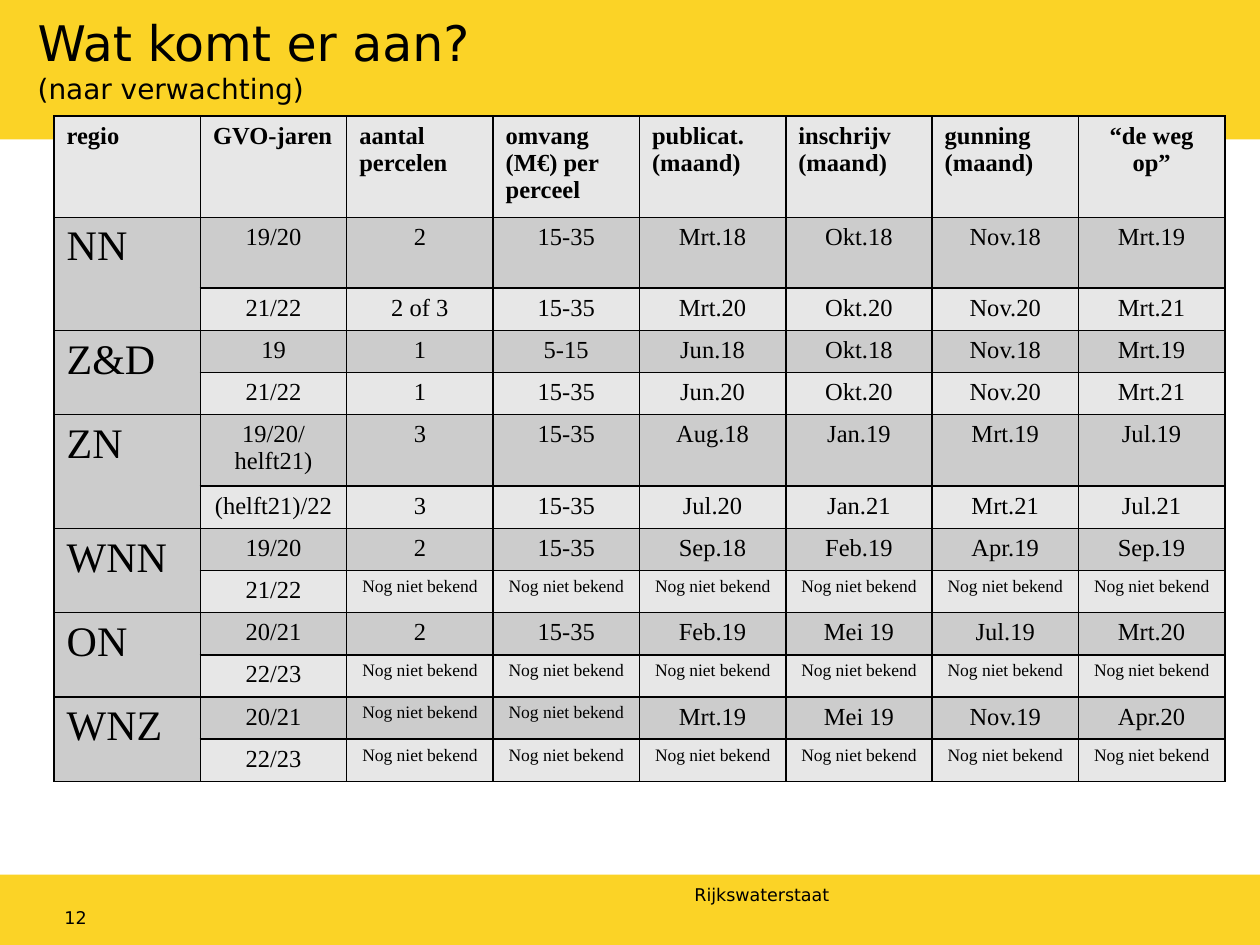
from lxml.etree import SubElement
from pptx import Presentation
from pptx.dml.color import RGBColor
from pptx.enum.shapes import MSO_SHAPE
from pptx.enum.text import MSO_ANCHOR, PP_ALIGN
from pptx.oxml.ns import qn
from pptx.util import Cm, Pt

COLORS = {"band": "FBD326", "light": "E7E7E7", "dark": "CCCCCC", "text": "000000"}
SANS, SERIF = "DejaVu Sans", "Times New Roman"
UNKNOWN = "Nog niet bekend"
HEADERS = ["regio", "GVO-jaren", "aantal\npercelen", "omvang\n(M€) per perceel",
           "publicat.\n(maand)", "inschrijv\n(maand)", "gunning\n(maand)", "“de weg op”"]
REGIONS = {
    "NN": [["19/20", "2", "15-35", "Mrt.18", "Okt.18", "Nov.18", "Mrt.19"],
           ["21/22", "2 of 3", "15-35", "Mrt.20", "Okt.20", "Nov.20", "Mrt.21"]],
    "Z&D": [["19", "1", "5-15", "Jun.18", "Okt.18", "Nov.18", "Mrt.19"],
            ["21/22", "1", "15-35", "Jun.20", "Okt.20", "Nov.20", "Mrt.21"]],
    "ZN": [["19/20/\nhelft21)", "3", "15-35", "Aug.18", "Jan.19", "Mrt.19", "Jul.19"],
           ["(helft21)/22", "3", "15-35", "Jul.20", "Jan.21", "Mrt.21", "Jul.21"]],
    "WNN": [["19/20", "2", "15-35", "Sep.18", "Feb.19", "Apr.19", "Sep.19"],
            ["21/22"] + [UNKNOWN] * 6],
    "ON": [["20/21", "2", "15-35", "Feb.19", "Mei 19", "Jul.19", "Mrt.20"],
           ["22/23"] + [UNKNOWN] * 6],
    "WNZ": [["20/21", UNKNOWN, UNKNOWN, "Mrt.19", "Mei 19", "Nov.19", "Apr.20"],
            ["22/23"] + [UNKNOWN] * 6],
}
HEADER_HEIGHT, ROW_HEIGHT, TALL_HEIGHT = Cm(2.04), Cm(0.85), Cm(1.43)
TALL_ROWS = (1, 5)


def rgb(name):
    """Return the named palette colour."""
    return RGBColor.from_string(COLORS[name])


def style(p, size, name, bold=False, align=PP_ALIGN.LEFT):
    """Set the font and alignment of a paragraph."""
    p.alignment = align
    p.font.size, p.font.name, p.font.bold = Pt(size), name, bold
    p.font.color.rgb = rgb("text")


def add_band(s, left, top, width, height):
    """Add a plain yellow band."""
    sp = s.shapes.add_shape(MSO_SHAPE.RECTANGLE, left, top, width, height)
    sp.shadow.inherit = False
    sp.fill.solid()
    sp.fill.fore_color.rgb = rgb("band")
    sp.line.fill.background()


def add_text(s, left, top, width, height, lines, anchor=MSO_ANCHOR.TOP, inset=0):
    """Add a text box from (text, size) lines."""
    tf = s.shapes.add_textbox(left, top, width, height).text_frame
    tf.word_wrap = True
    tf.vertical_anchor = anchor
    tf.margin_left = tf.margin_right = inset
    tf.margin_top = tf.margin_bottom = inset // 2
    tf.text = "\n".join(text for text, _ in lines)
    for p, (_, size) in zip(tf.paragraphs, lines):
        style(p, size, SANS)


def add_header(s, left, top, width, height):
    """Add the top band with title and subtitle."""
    add_band(s, left, top, width, height)
    add_text(s, left + Cm(0.51), top + Cm(0.13), Cm(9.45), Cm(2.13),
             [("Wat komt er aan?", 28), ("(naar verwachting)", 16)], inset=Cm(0.25))


def add_footer(s, left, top, width, height):
    """Add the bottom band with organisation and page number."""
    add_band(s, left, top, width, height)
    add_text(s, left + Cm(14), top + Cm(0.2), Cm(8.76), Cm(0.33), [("Rijkswaterstaat", 10)])
    add_text(s, left + Cm(1.3), top + Cm(0.74), Cm(5.28), Cm(0.33), [("12", 10)],
             MSO_ANCHOR.BOTTOM)


def fill_cell(cell, text, fill, size, bold=False, align=PP_ALIGN.CENTER):
    """Write a cell and give it black borders and a fill."""
    cell.text = text
    for p in cell.text_frame.paragraphs:
        style(p, size, SERIF, bold, align)
    tc_pr = cell._tc.get_or_add_tcPr()
    for side in ("lnL", "lnR", "lnT", "lnB"):
        ln = SubElement(tc_pr, qn(f"a:{side}"), w=str(Pt(1)))
        SubElement(SubElement(ln, qn("a:solidFill")), qn("a:srgbClr"), val=COLORS["text"])
    cell.fill.solid()
    cell.fill.fore_color.rgb = rgb(fill)


def add_planning(s, left, top, width):
    """Add the planning table with two rows per region."""
    heights = [HEADER_HEIGHT] + [ROW_HEIGHT] * (2 * len(REGIONS))
    for r in TALL_ROWS:
        heights[r] = TALL_HEIGHT
    table = s.shapes.add_table(len(heights), len(HEADERS), left, top, width, sum(heights)).table
    for row, height in zip(table.rows, heights):
        row.height = height
    for c, text in enumerate(HEADERS):
        align = PP_ALIGN.CENTER if c == len(HEADERS) - 1 else PP_ALIGN.LEFT
        fill_cell(table.cell(0, c), text, "light", 14, True, align)
    for i, (region, periods) in enumerate(REGIONS.items()):
        first = 1 + 2 * i
        for r, (values, fill) in enumerate(zip(periods, ("dark", "light")), first):
            name = region if r == first else ""
            fill_cell(table.cell(r, 0), name, "dark", 24, align=PP_ALIGN.LEFT)
            for c, text in enumerate(values, 1):
                fill_cell(table.cell(r, c), text, fill, 10 if text == UNKNOWN else 14)
        table.cell(first, 0).merge(table.cell(first + 1, 0))


def main():
    """Build and save the slide."""
    prs = Presentation()
    prs.slide_width, prs.slide_height = Cm(25.4), Cm(19.05)
    s = prs.slides.add_slide(prs.slide_layouts[6])
    add_header(s, 0, 0, prs.slide_width, Cm(2.81))
    add_footer(s, 0, Cm(17.63), prs.slide_width, Cm(1.42))
    add_planning(s, Cm(1.09), Cm(2.34), Cm(23.6))
    prs.save("out.pptx")


if __name__ == "__main__":
    main()
